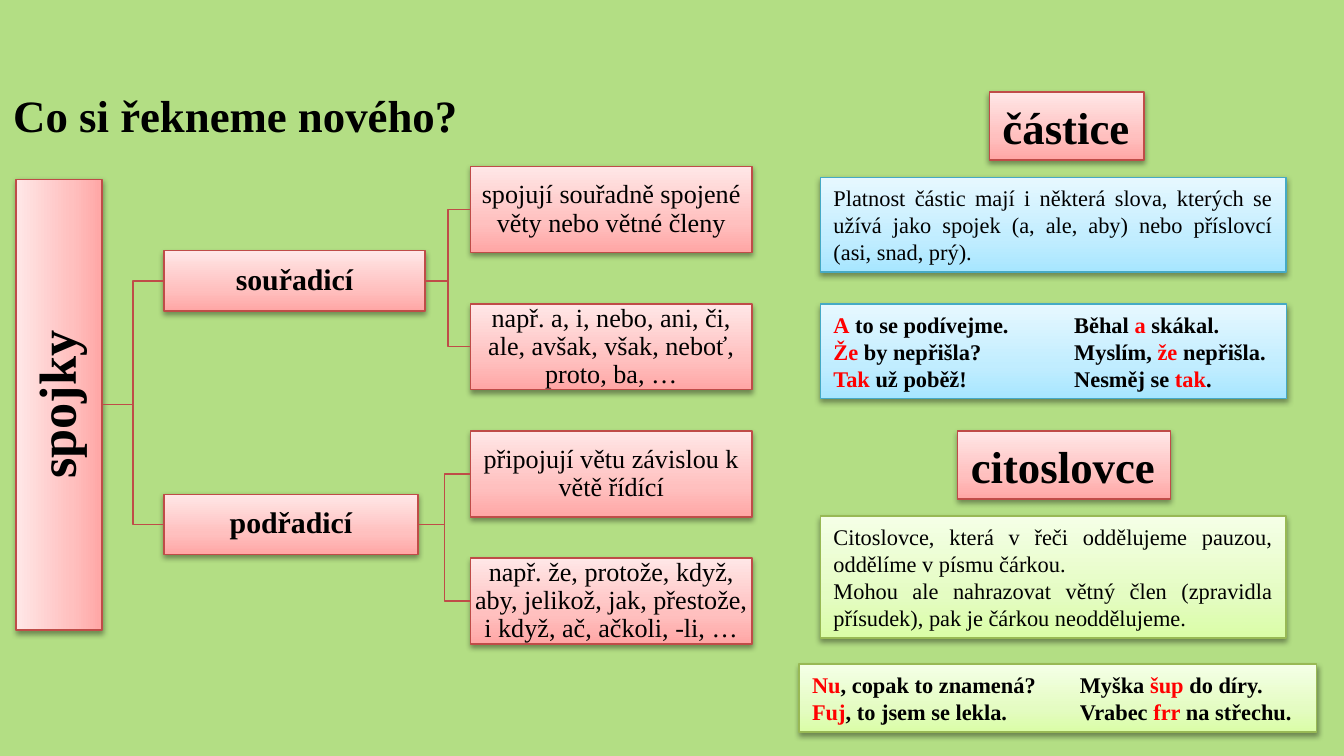
from dataclasses import dataclass
from typing import NamedTuple

from lxml import etree
from pptx import Presentation
from pptx import util as u
from pptx.dml import color as c
from pptx.enum import shapes as s, text as t
from pptx.oxml import ns, parse_xml


class Palette(NamedTuple):
    dark: str
    middle: str
    light: str
    line: str


@dataclass(frozen=True)
class Theme:
    font: str = "Times New Roman"
    background: str = "B3DE84"
    ink: str = "000000"
    accent: str = "FF0000"
    red: Palette = Palette("FFA6A5", "FFC0BF", "FFE7E7", "BF4C48")
    blue: Palette = Palette("A7E6FF", "C1EDFF", "E7F8FF", "46AAC5")
    green: Palette = Palette("DAFDA7", "E4FCC2", "F5FFE7", "98B955")
    line_width: float = 0.75
    root_size: int = 28
    heading_size: int = 24
    branch_size: int = 16
    leaf_size: int = 14
    body_size: int = 12


class Run(NamedTuple):
    text: str
    accent: bool = False


class Frame(NamedTuple):
    left: float
    top: float
    width: float
    height: float


@dataclass(frozen=True)
class Box:
    frame: Frame
    paragraphs: list[list[Run]]
    size: int
    palette: Palette
    bold: bool = False
    align: t.PP_ALIGN = t.PP_ALIGN.LEFT
    inset: tuple[float, float] = (7.2, 3.6)
    spacing: float = 1.0
    wrap: bool = True
    tab: float = 0
    upright: bool = False


THEME = Theme()
DRAWING = ns.nsdecls("a")


def write_text(shape, box: Box) -> None:
    frame = shape.text_frame
    frame.word_wrap = box.wrap
    frame.vertical_anchor = t.MSO_ANCHOR.MIDDLE
    frame.margin_left = frame.margin_right = u.Pt(box.inset[0])
    frame.margin_top = frame.margin_bottom = u.Pt(box.inset[1])
    for index, runs in enumerate(box.paragraphs):
        paragraph = frame.add_paragraph() if index else frame.paragraphs[0]
        paragraph.alignment = box.align
        paragraph.line_spacing = box.spacing
        if box.tab:
            paragraph._p.get_or_add_pPr().append(parse_xml(
                f'<a:tabLst {DRAWING}><a:tab pos="{u.Pt(box.tab)}" algn="l"/></a:tabLst>'))
        for part in runs:
            run = paragraph.add_run()
            run.text = part.text
            run.font.name = THEME.font
            run.font.size = u.Pt(box.size)
            run.font.bold = box.bold
            run.font.color.rgb = c.RGBColor.from_string(
                THEME.accent if part.accent else THEME.ink)


def style_box(shape, palette: Palette, angle: int) -> None:
    shape.line.color.rgb = c.RGBColor.from_string(palette.line)
    shape.line.width = u.Pt(THEME.line_width)
    shape.shadow.inherit = False
    effects = shape._element.spPr.find(ns.qn("a:effectLst"))
    effects.append(parse_xml(
        f'<a:outerShdw {DRAWING} blurRad="{u.Pt(3.1)}" dist="{u.Pt(1.6)}" dir="5400000" rotWithShape="0">'
        '<a:srgbClr val="000000"><a:alpha val="38000"/></a:srgbClr></a:outerShdw>'))
    stops = "".join(
        f'<a:gs pos="{position * 1000}"><a:srgbClr val="{tint}"/></a:gs>'
        for position, tint in zip((0, 35, 100), palette))
    shape.fill.gradient()
    gradient = shape._element.spPr.find(ns.qn("a:gradFill"))
    gradient.getparent().replace(gradient, parse_xml(
        f'<a:gradFill {DRAWING} rotWithShape="1"><a:gsLst>{stops}</a:gsLst>'
        f'<a:lin ang="{angle * 60000}" scaled="0"/></a:gradFill>'))


def draw_box(slide, box: Box):
    shape = slide.shapes.add_shape(s.MSO_SHAPE.RECTANGLE, *map(u.Pt, box.frame))
    style_box(shape, box.palette, 180 if box.upright else 270)
    write_text(shape, box)
    if box.upright:
        shape.text_frame._txBody.bodyPr.set("vert", "vert270")
    return shape


def draw_title(slide, box: Box) -> None:
    write_text(slide.shapes.add_textbox(*map(u.Pt, box.frame)), box)


def join(slide, parent, child) -> None:
    connector = slide.shapes.add_connector(s.MSO_CONNECTOR.ELBOW, 0, 0, 0, 0)
    connector.begin_connect(parent, 3)
    connector.end_connect(child, 1)
    connector.line.color.rgb = c.RGBColor.from_string(THEME.red.line)
    connector.line.width = u.Pt(THEME.line_width)
    etree.SubElement(connector._element.spPr, ns.qn("a:effectLst"))


def tree_box(frame: Frame, label: str, size: int, bold: bool, upright: bool = False) -> Box:
    return Box(frame, [[Run(label)]], size, THEME.red, bold, t.PP_ALIGN.CENTER,
               (0.72, 0.72), 0.9, upright=upright)


def heading(frame: Frame, label: str) -> Box:
    return Box(frame, [[Run(label)]], THEME.heading_size, THEME.red, True, wrap=False)


def rule(frame: Frame, lines: list[str], palette: Palette) -> Box:
    return Box(frame, [[Run(line)] for line in lines], THEME.body_size, palette,
               align=t.PP_ALIGN.JUSTIFY)


def examples(frame: Frame, lines: list[list[Run]], palette: Palette, tab: float) -> Box:
    return Box(frame, lines, THEME.body_size, palette, True, tab=tab)


BRANCHES = [
    (Frame(87.8, 134.4, 140, 32.2), "souřadicí", [
        (89.2, "spojují souřadně spojené věty nebo větné členy"),
        (162.8, "např. a, i, nebo, ani, či, ale, avšak, však, neboť, proto, ba, …")]),
    (Frame(87.8, 264.8, 136.2, 32.2), "podřadicí", [
        (231, "připojují větu závislou k větě řídící"),
        (299, "např. že, protože, když, aby, jelikož, jak, přestože, i když, ač, ačkoli, -li, …")]),
]

PANELS = [
    heading(Frame(530, 49.4, 83, 36.4), "částice"),
    rule(Frame(439.4, 95, 249.6, 50.8), [
        "Platnost částic mají i některá slova, kterých se užívá jako spojek "
        "(a, ale, aby) nebo příslovcí (asi, snad, prý)."], THEME.blue),
    examples(Frame(439.4, 162.8, 250, 50.8), [
        [Run("A", True), Run(" to se podívejme.\tBěhal "), Run("a", True), Run(" skákal.")],
        [Run("Že", True), Run(" by nepřišla?\tMyslím,"), Run(" že ", True), Run("nepřišla.")],
        [Run("Tak", True), Run(" už poběž!\tNesměj se "), Run("tak", True), Run(".")],
    ], THEME.blue, 129),
    heading(Frame(513, 231, 114, 36.4), "citoslovce"),
    rule(Frame(439.4, 276.4, 249.6, 65.4), [
        "Citoslovce, která v řeči oddělujeme pauzou, oddělíme v písmu čárkou.",
        "Mohou ale nahrazovat větný člen (zpravidla přísudek), pak je čárkou neoddělujeme.",
    ], THEME.green),
    examples(Frame(428, 355.8, 277.4, 36.4), [
        [Run("Nu", True), Run(", copak to znamená?\tMyška "), Run("šup", True), Run(" do díry.")],
        [Run("Fuj", True), Run(", to jsem se lekla.\tVrabec"), Run(" frr ", True), Run("na střechu.")],
    ], THEME.green, 143.4),
]


def main() -> None:
    presentation = Presentation()
    presentation.slide_width = u.Pt(720)
    presentation.slide_height = u.Pt(405)
    slide = presentation.slides.add_slide(presentation.slide_layouts[6])
    slide.background.fill.solid()
    slide.background.fill.fore_color.rgb = c.RGBColor.from_string(THEME.background)

    draw_title(slide, Box(Frame(0, 38.2, 368.6, 46.8), [[Run("Co si řekneme nového?")]],
                          THEME.heading_size, THEME.red, True))
    root = draw_box(slide, tree_box(Frame(8.6, 96, 46, 241.6), "spojky",
                                    THEME.root_size, True, True))
    for frame, label, leaves in BRANCHES:
        branch = draw_box(slide, tree_box(frame, label, THEME.branch_size, True))
        join(slide, root, branch)
        for top, words in leaves:
            leaf = draw_box(slide, tree_box(Frame(252.2, top, 150.6, 46), words,
                                            THEME.leaf_size, False))
            join(slide, branch, leaf)
    for panel in PANELS:
        draw_box(slide, panel)
    presentation.save("out.pptx")


if __name__ == "__main__":
    main()
